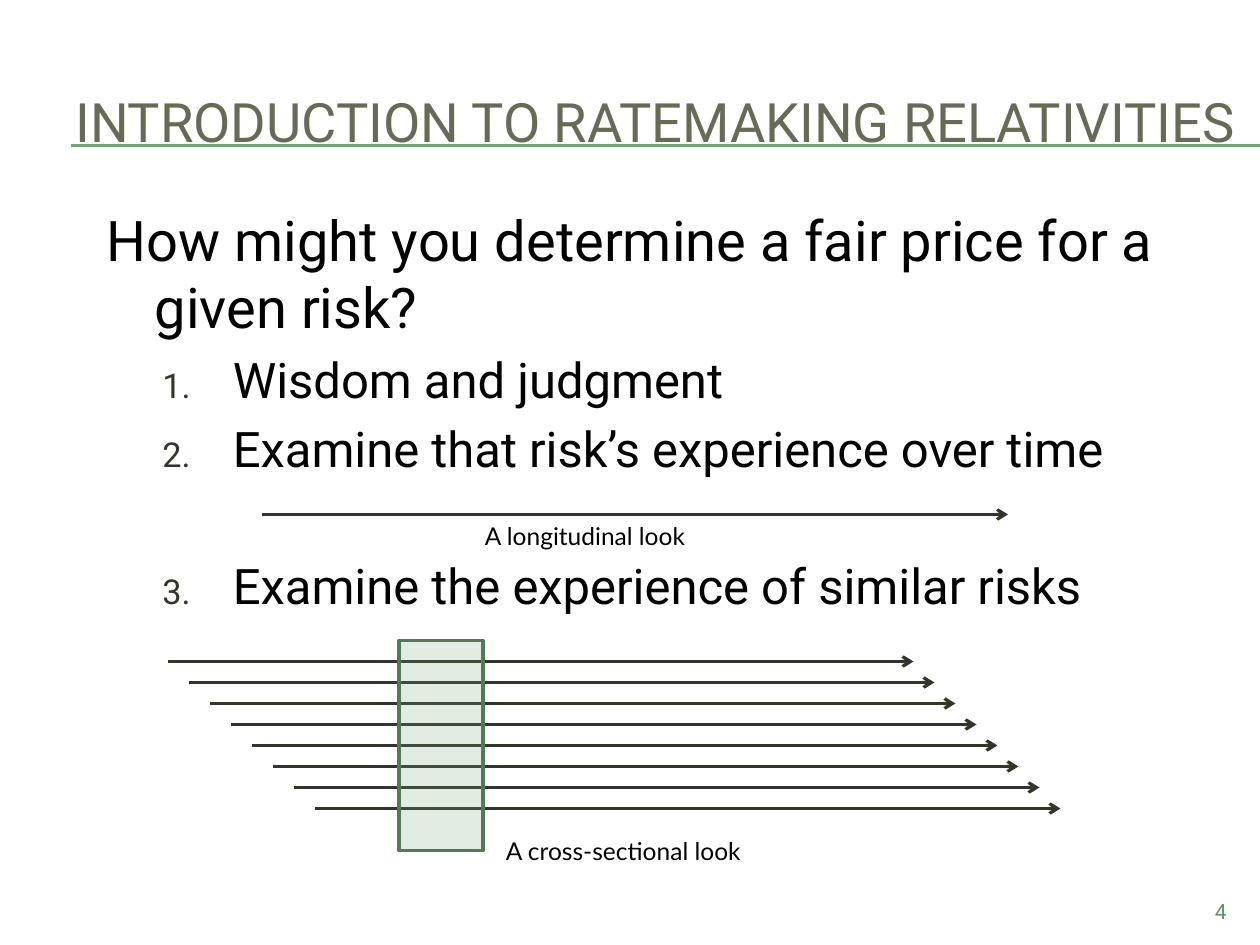
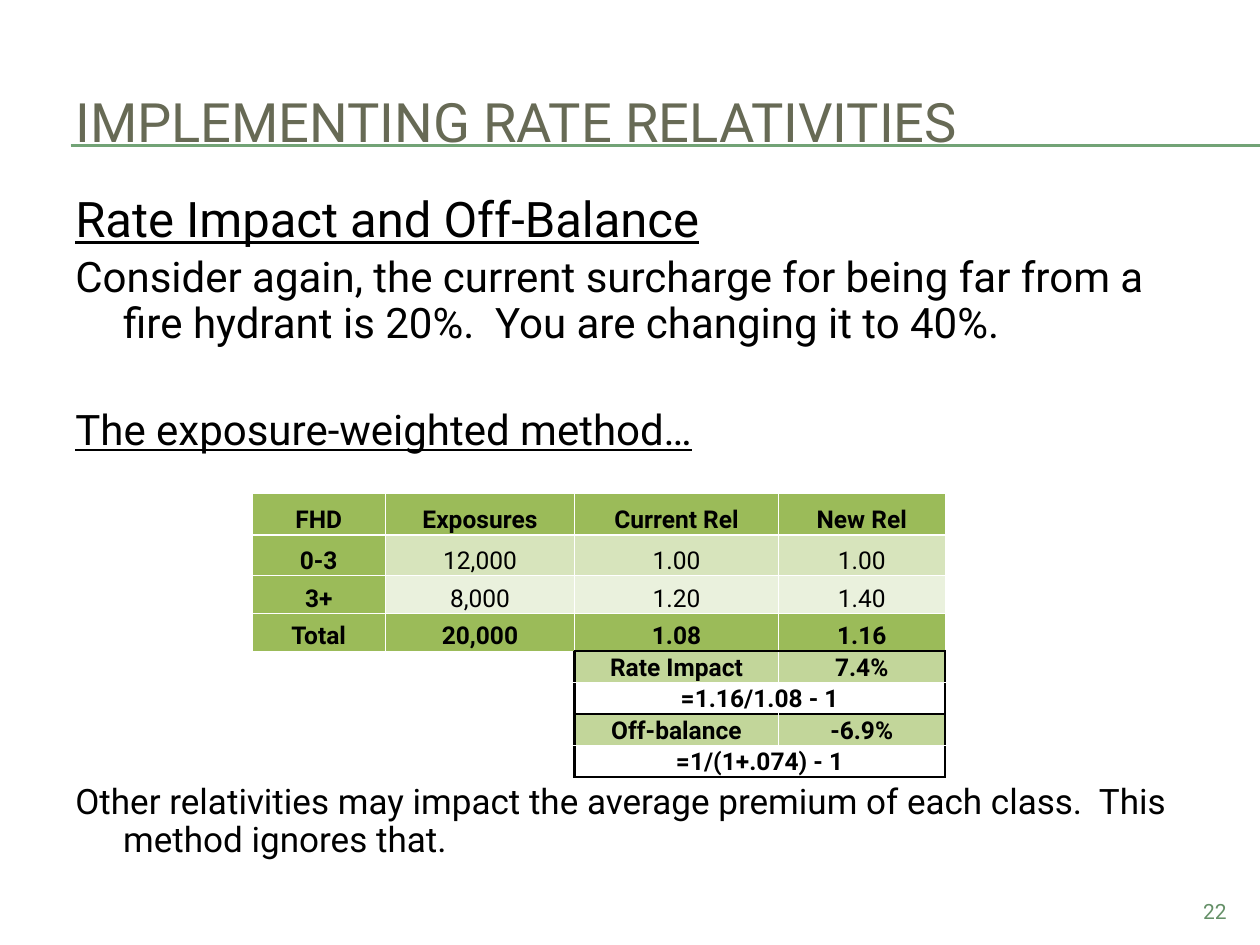
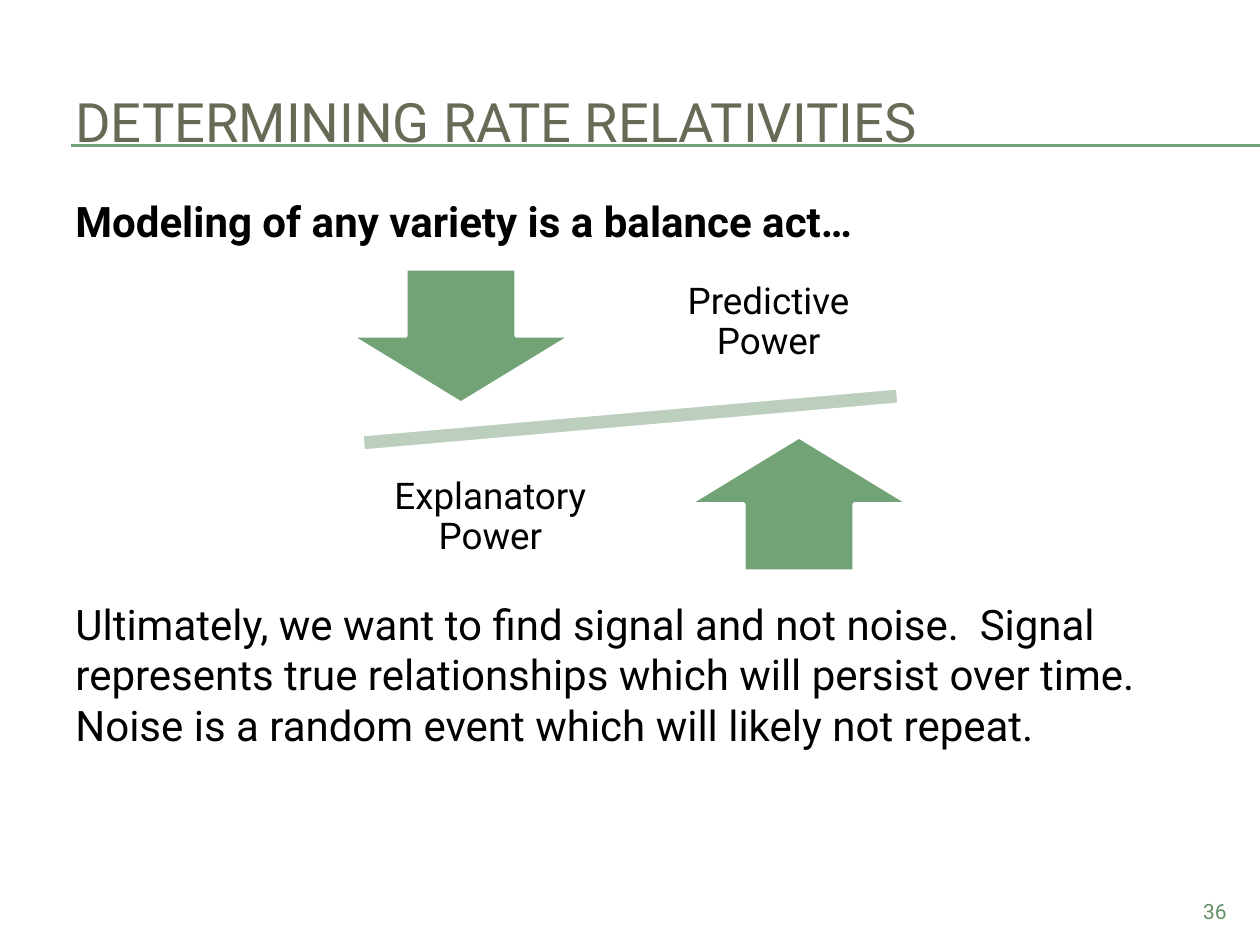
from dataclasses import dataclass
from typing import NamedTuple

from lxml import etree
from pptx import Presentation
from pptx.dml.color import RGBColor
from pptx.enum.shapes import MSO_CONNECTOR, MSO_SHAPE
from pptx.enum.text import MSO_ANCHOR, PP_ALIGN
from pptx.oxml.ns import qn
from pptx.util import Inches, Pt

STRAIGHT = MSO_CONNECTOR.STRAIGHT
RECTANGLE = MSO_SHAPE.RECTANGLE
MINUS = MSO_SHAPE.MATH_MINUS
DOWN_ARROW = MSO_SHAPE.DOWN_ARROW
UP_ARROW = MSO_SHAPE.UP_ARROW
TOP, MIDDLE, BOTTOM = MSO_ANCHOR.TOP, MSO_ANCHOR.MIDDLE, MSO_ANCHOR.BOTTOM
LEFT, CENTER, RIGHT = PP_ALIGN.LEFT, PP_ALIGN.CENTER, PP_ALIGN.RIGHT

GRID_COLUMNS, GRID_ROWS = 120, 90
CELL = Inches(10) / GRID_COLUMNS
LINE_HEIGHT = 1.2
SPACE_SHARE = 0.2


@dataclass(frozen=True)
class Theme:
    font: str = "Roboto"
    caption_font: str = "Lato"
    black: str = "000000"
    white: str = "FFFFFF"
    title: str = "676A55"
    page_number: str = "659068"
    accent: str = "72A376"
    accent_dark: str = "547957"
    accent_pale: str = "BCCEBD"
    ink: str = "34352A"
    table_head: str = "9BBB59"
    table_summary: str = "C2D69A"
    table_bands: tuple = ("D7E4BC", "EAF1DD")
    title_size: float = 31
    question_size: float = 32
    heading_size: float = 28
    body_size: float = 24
    label_size: float = 21
    note_size: float = 20
    small_size: float = 14
    page_size: float = 12


THEME = Theme()


class Box(NamedTuple):
    left: float
    top: float
    width: float
    height: float

    def inner(self, left, top, width, height):
        return Box(self.left + left, self.top + top, width, height)

    def emu(self):
        return [round(value * CELL) for value in self]


@dataclass(frozen=True)
class Line:
    text: str
    size: float
    color: str = THEME.black
    font: str = THEME.font
    bold: bool = False
    underline: bool = False
    align: int = LEFT
    before: float = 0
    after: float = 0
    spacing: float = 1.0
    margin: float = 0
    indent: float = 0
    numbered: bool = False


PAGE = Box(0, 0, GRID_COLUMNS, GRID_ROWS)


def rgb(color):
    return RGBColor.from_string(color)


def space_before(size, skipped_lines=0, skipped_size=0, spacing=1.0):
    skipped = skipped_size * (LINE_HEIGHT * spacing + SPACE_SHARE)
    return size * SPACE_SHARE + skipped_lines * skipped


def number_paragraph(paragraph):
    paragraph.level = 1
    properties = paragraph._p.get_or_add_pPr()
    color = etree.Element(qn("a:buClr"))
    etree.SubElement(color, qn("a:srgbClr"), val=THEME.ink)
    size = etree.Element(qn("a:buSzPct"), val="70000")
    number = etree.Element(qn("a:buAutoNum"), type="arabicPeriod")
    for element in (color, size, number):
        properties.find(qn("a:defRPr")).addprevious(element)


def write_paragraph(paragraph, line):
    paragraph.text = line.text
    paragraph.alignment = line.align
    paragraph.space_before = Pt(line.before)
    paragraph.space_after = Pt(line.after)
    paragraph.line_spacing = line.spacing
    font = paragraph.font
    font.name, font.size = line.font, Pt(line.size)
    font.bold, font.underline = line.bold, line.underline
    font.color.rgb = rgb(line.color)
    properties = paragraph._p.get_or_add_pPr()
    properties.set("marL", str(Inches(line.margin)))
    properties.set("indent", str(Inches(line.indent)))
    if line.numbered:
        number_paragraph(paragraph)


def add_text(slide, box, lines, anchor=TOP, inset=None):
    frame = slide.shapes.add_textbox(*box.emu()).text_frame
    frame.word_wrap = True
    frame.vertical_anchor = anchor
    if inset is not None:
        frame.margin_left = frame.margin_right = Inches(inset)
        frame.margin_top = frame.margin_bottom = Inches(inset)
    for index, line in enumerate(lines):
        paragraph = frame.add_paragraph() if index else frame.paragraphs[0]
        write_paragraph(paragraph, line)


def add_line(slide, left, top, width, color, weight, arrow=False):
    x, y, length, _ = Box(left, top, width, 0).emu()
    connector = slide.shapes.add_connector(STRAIGHT, x, y, x + length, y)
    connector.line.color.rgb = rgb(color)
    connector.line.width = Pt(weight)
    properties = connector.element.spPr
    if arrow:
        etree.SubElement(properties.find(qn("a:ln")), qn("a:tailEnd"), type="arrow")
    etree.SubElement(properties, qn("a:effectLst"))


def add_shape(slide, kind, box, fill, outline, rotation=0, opacity=100):
    shape = slide.shapes.add_shape(kind, *box.emu())
    shape.shadow.inherit = False
    shape.rotation = rotation
    shape.fill.solid()
    shape.fill.fore_color.rgb = rgb(fill)
    shape.line.color.rgb = rgb(outline)
    shape.line.width = Pt(2)
    if opacity < 100:
        color = shape.element.spPr.find(qn("a:solidFill")).find(qn("a:srgbClr"))
        etree.SubElement(color, qn("a:alpha"), val=str(opacity * 1000))


def add_frame(presentation, title, number):
    slide = presentation.slides.add_slide(presentation.slide_layouts[6])
    for top in (13.8, 13.92):
        add_line(slide, 6.72, top, GRID_COLUMNS - 6.72, THEME.accent, 0.75)
    add_text(slide, PAGE.inner(6, 6, 114, 11),
             [Line(title, THEME.title_size, THEME.title)], MIDDLE)
    add_text(slide, PAGE.inner(108, 85, 10, 3.25),
             [Line(str(number), THEME.page_size, THEME.page_number, align=RIGHT)])
    return slide


def add_caption(slide, box, text):
    add_text(slide, box, [Line(text, THEME.small_size, font=THEME.caption_font)])


def add_cross_section(slide, box):
    for step in range(0, 16, 2):
        add_line(slide, box.left + step, box.top + 2 + step, 71, THEME.ink, 1.75, True)
    add_shape(slide, RECTANGLE, box.inner(22, 0, 8, 20),
              THEME.accent, THEME.accent_dark, opacity=20)
    add_caption(slide, box.inner(31, 18, 25, 4), "A cross-sectional look")


def add_longitudinal(slide, box):
    add_line(slide, box.left, box.top, box.width, THEME.ink, 1.75, True)
    add_caption(slide, box.inner(20, 0, 25, 4), "A longitudinal look")


def build_introduction(presentation):
    slide = add_frame(presentation, "INTRODUCTION TO RATEMAKING RELATIVITIES", 4)
    size = THEME.heading_size
    items = (("Wisdom and judgment", 0),
             ("Examine that risk’s experience over time", 0),
             ("Examine the experience of similar risks", 1))
    lines = [Line("How might you determine a fair price for a given risk?",
                  THEME.question_size, margin=0.38, indent=-0.38)]
    lines += [Line(text, size, before=space_before(size, skipped, size),
                   margin=1, indent=-0.56, numbered=True) for text, skipped in items]
    add_text(slide, PAGE.inner(9, 19, 103, 64), lines)
    add_longitudinal(slide, PAGE.inner(25, 49, 71, 4))
    add_cross_section(slide, PAGE.inner(16, 61, 85, 22))


TABLE_ROWS = (
    ("FHD", "Exposures", "Current Rel", "New Rel"),
    ("0-3", "12,000", "1.00", "1.00"),
    ("3+", "8,000", "1.20", "1.40"),
    ("Total", "20,000", "1.08", "1.16"),
    ("", "", "Rate Impact", "7.4%"),
    ("", "", "=1.16/1.08 - 1", ""),
    ("", "", "Off-balance", "-6.9%"),
    ("", "", "=1/(1+.074) - 1", ""),
)
COLUMN_WIDTHS = (1.06, 1.5, 1.62, 1.32)
ROW_HEIGHTS = (0.33, 0.32, 0.3, 0.3, 0.25, 0.25, 0.25, 0.25)
SUMMARY_ROW, SUMMARY_COLUMN = 4, 2
FORMULA_ROWS = (5, 7)


def cell_fill(row, column):
    if row < SUMMARY_ROW:
        is_band = row in (1, 2) and column > 0
        return THEME.table_bands[row - 1] if is_band else THEME.table_head
    is_summary = column >= SUMMARY_COLUMN and row not in FORMULA_ROWS
    return THEME.table_summary if is_summary else None


def cell_borders(row, column):
    thin, thick, box = (THEME.white, 0.5), (THEME.white, 1.5), (THEME.black, 1.5)
    borders = dict.fromkeys("LRTB", thin)
    if row == 0:
        borders["B"] = thick
    if row == 1:
        borders["T"] = thick
    if row >= SUMMARY_ROW:
        if column == SUMMARY_COLUMN:
            borders["L"] = box
        if column in (1, 3) or (column == SUMMARY_COLUMN and row in FORMULA_ROWS):
            borders["R"] = box
    if column >= SUMMARY_COLUMN and row >= SUMMARY_ROW - 1:
        if row % 2:
            borders["B"] = box
        else:
            borders["T"] = box
    return borders


def draw_borders(cell, borders):
    properties = cell._tc.get_or_add_tcPr()
    for index, (side, (color, weight)) in enumerate(borders.items()):
        line = etree.Element(qn(f"a:ln{side}"), w=str(Pt(weight)))
        fill = etree.SubElement(line, qn("a:solidFill"))
        etree.SubElement(fill, qn("a:srgbClr"), val=color)
        properties.insert(index, line)


def format_cell(cell, row, column):
    cell.vertical_anchor = BOTTOM
    cell.margin_left = cell.margin_right = cell.margin_top = Inches(0.01)
    cell.margin_bottom = 0
    bold = row not in (1, 2) or column == 0
    write_paragraph(cell.text_frame.paragraphs[0],
                    Line(TABLE_ROWS[row][column], THEME.small_size, bold=bold, align=CENTER))
    fill = cell_fill(row, column)
    if fill:
        cell.fill.solid()
        cell.fill.fore_color.rgb = rgb(fill)
    else:
        cell.fill.background()
    draw_borders(cell, cell_borders(row, column))


def add_relativity_table(slide, box):
    table = slide.shapes.add_table(len(TABLE_ROWS), len(COLUMN_WIDTHS), *box.emu()).table
    table.first_row = table.horz_banding = False
    for column, width in zip(table.columns, COLUMN_WIDTHS):
        column.width = Inches(width)
    for row, height in zip(table.rows, ROW_HEIGHTS):
        row.height = Inches(height)
    for row in range(len(ROW_HEIGHTS)):
        for column in range(len(COLUMN_WIDTHS)):
            format_cell(table.cell(row, column), row, column)
    for row in FORMULA_ROWS:
        table.cell(row, SUMMARY_COLUMN).merge(table.cell(row, SUMMARY_COLUMN + 1))


def build_implementation(presentation):
    slide = add_frame(presentation, "IMPLEMENTING RATE RELATIVITIES", 22)
    spacing = 0.9
    items = (
        ("Rate Impact and Off-Balance", THEME.heading_size, True, None),
        ("Consider again, the current surcharge for being far from a fire hydrant is 20%.  "
         "You are changing it to 40%.", THEME.body_size, False, 0),
        ("The exposure-weighted method…", THEME.body_size, True, 1),
        ("Other relativities may impact the average premium of each class.  "
         "This method ignores that.", THEME.note_size, False, 6),
    )
    lines = []
    for text, size, underline, skipped in items:
        before = 0 if skipped is None else space_before(
            size, skipped, THEME.body_size, spacing)
        lines.append(Line(text, size, underline=underline, before=before,
                          spacing=spacing, margin=0.38, indent=-0.38))
    add_text(slide, PAGE.inner(6, 18, 108, 70), lines)
    add_relativity_table(slide, PAGE.inner(24, 47, 66, 27))


def add_balance(slide, box):
    arrow_size, label_size = (21, 12.8), (22.4, 13.4)
    add_shape(slide, MINUS, box.inner(1.2, 12.6, 69.7, 6.7),
              THEME.accent_pale, THEME.white, rotation=355)
    sides = ((DOWN_ARROW, (9.4, 1.6), "Predictive Power", (38, 0)),
             (UP_ARROW, (41.6, 17.6), "Explanatory Power", (11.5, 18.6)))
    for kind, arrow_place, label, label_place in sides:
        add_shape(slide, kind, box.inner(*arrow_place, *arrow_size),
                  THEME.accent, THEME.white)
        add_text(slide, box.inner(*label_place, *label_size),
                 [Line(label, THEME.label_size, align=CENTER, spacing=0.9,
                       after=THEME.label_size * 0.35)], MIDDLE, 0.16)


def build_determination(presentation):
    slide = add_frame(presentation, "DETERMINING RATE RELATIVITIES", 36)
    size = THEME.body_size
    diagram_lines = 7
    add_text(slide, PAGE.inner(6, 18, 105, 59), [
        Line("Modeling of any variety is a balance act…", size, bold=True),
        Line("Ultimately, we want to find signal and not noise.  Signal represents true "
             "relationships which will persist over time.  Noise is a random event which "
             "will likely not repeat.", size, before=diagram_lines * size * LINE_HEIGHT),
    ])
    add_balance(slide, PAGE.inner(24, 24, 72, 32))


def main():
    presentation = Presentation()
    presentation.slide_width = round(GRID_COLUMNS * CELL)
    presentation.slide_height = round(GRID_ROWS * CELL)
    build_introduction(presentation)
    build_implementation(presentation)
    build_determination(presentation)
    presentation.save("out.pptx")


if __name__ == "__main__":
    main()
